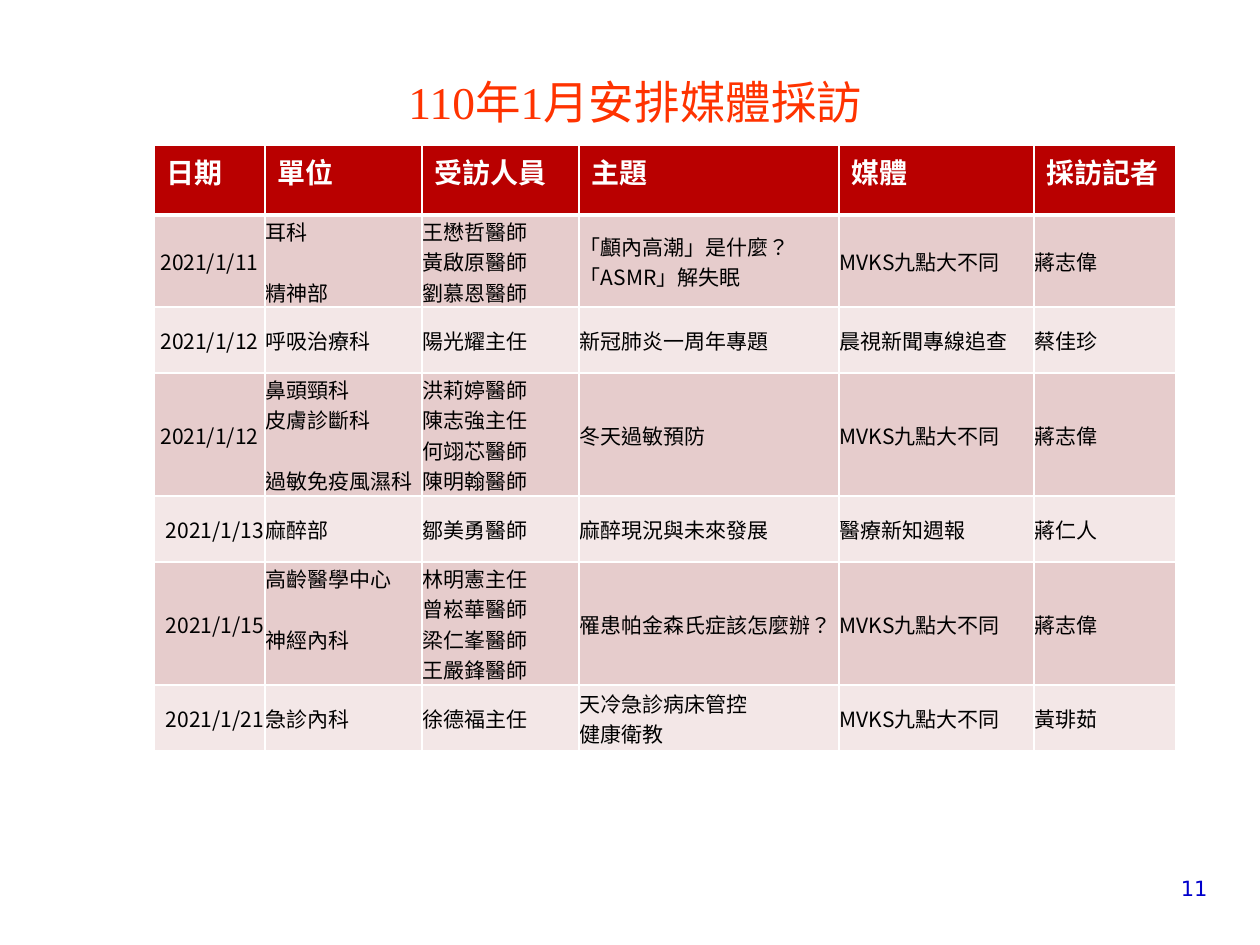
from lxml import etree
from pptx import Presentation
from pptx import util as u
from pptx.dml.color import RGBColor
from pptx.enum import text
from pptx.oxml import ns

PX = 914400 // 126
RED = RGBColor(0xB9, 0x00, 0x00)
ORANGE = RGBColor(0xFF, 0x33, 0x00)
BLUE = RGBColor(0x00, 0x00, 0xCC)
WHITE = RGBColor(0xFF, 0xFF, 0xFF)
BLACK = RGBColor(0x00, 0x00, 0x00)
BANDS = [RGBColor(0xE6, 0xCC, 0xCC), RGBColor(0xF3, 0xE7, 0xE7)]
LINE_GAP = u.Pt(17.5)
LEFT, CENTER, RIGHT = text.PP_ALIGN.LEFT, text.PP_ALIGN.CENTER, text.PP_ALIGN.RIGHT

TITLE = {"size": u.Pt(26), "name": "Times New Roman", "bold": False}
HEADER = {"size": u.Pt(16), "name": "Noto Sans CJK SC", "bold": True}
BODY = {"size": u.Pt(12), "name": "Noto Sans CJK TC", "bold": False}
NUMBER = {"size": u.Pt(12), "name": "DejaVu Sans", "bold": False}


def write(frame, content, style, color, alignment):
    paragraph = frame.paragraphs[0]
    for block_index, block in enumerate(content.split("\n\n")):
        for line_index, line in enumerate(block.split("\n")):
            if block_index or line_index:
                paragraph = frame.add_paragraph()
            if block_index and not line_index:
                paragraph.space_before = LINE_GAP
            paragraph.alignment = alignment
            run = paragraph.add_run()
            run.text = line
            for attribute, value in style.items():
                setattr(run.font, attribute, value)
            run.font.color.rgb = color
            properties = run.font._element
            properties.set("lang", "zh-TW")
            east_asian = etree.SubElement(properties, ns.qn("a:ea"))
            east_asian.set("typeface", style["name"].replace("Times New Roman", "Noto Sans CJK TC"))


def style_cell(cell, color, bottom_points):
    properties = cell._tc.get_or_add_tcPr()
    for side, points in zip("LRTB", (1, 1, 1, bottom_points)):
        line = etree.SubElement(properties, ns.qn(f"a:ln{side}"), w=str(u.Pt(points)))
        fill = etree.SubElement(line, ns.qn("a:solidFill"))
        etree.SubElement(fill, ns.qn("a:srgbClr"), val=str(WHITE))
    cell.fill.solid()
    cell.fill.fore_color.rgb = color


presentation = Presentation()
presentation.slide_width = 1260 * PX
presentation.slide_height = 945 * PX
slide = presentation.slides.add_slide(presentation.slide_layouts[5])

title = slide.shapes.title
title_box = {"left": 84, "top": 95, "width": 1103, "height": 40}
for attribute, value in title_box.items():
    setattr(title, attribute, value * PX)
title_frame = title.text_frame
title_frame.auto_size = text.MSO_AUTO_SIZE.NONE
title_frame.vertical_anchor = text.MSO_ANCHOR.BOTTOM
write(title_frame, "110年1月安排媒體採訪", TITLE, ORANGE, CENTER)

page_number = slide.shapes.add_textbox(1127 * PX, 869 * PX, 93 * PX, 38 * PX)
page_number.text_frame.word_wrap = True
write(page_number.text_frame, "11", NUMBER, BLUE, RIGHT)

headings = ["日期", "單位", "受訪人員", "主題", "媒體", "採訪記者"]
interviews = [
    ["2021/1/11", "耳科\n\n精神部", "王懋哲醫師\n黃啟原醫師\n劉慕恩醫師",
     "「顱內高潮」是什麼？「ASMR」解失眠", "MVKS九點大不同", "蔣志偉"],
    ["2021/1/12", "呼吸治療科", "陽光耀主任", "新冠肺炎一周年專題", "晨視新聞專線追查", "蔡佳珍"],
    ["2021/1/12", "鼻頭頸科\n皮膚診斷科\n\n過敏免疫風濕科",
     "洪莉婷醫師\n陳志強主任\n何翊芯醫師\n陳明翰醫師", "冬天過敏預防", "MVKS九點大不同", "蔣志偉"],
    ["2021/1/13", "麻醉部", "鄒美勇醫師", "麻醉現況與未來發展", "醫療新知週報", "蔣仁人"],
    ["2021/1/15", "高齡醫學中心\n\n神經內科",
     "林明憲主任\n曾崧華醫師\n梁仁峯醫師\n王嚴鋒醫師",
     "罹患帕金森氏症該怎麼辦？", "MVKS九點大不同", "蔣志偉"],
    ["2021/1/21", "急診內科", "徐德福主任", "天冷急診病床管控\n健康衛教", "MVKS九點大不同", "黃琲茹"],
]
column_widths = [111, 157, 157, 260, 195, 142]
row_heights = [70, 92, 66, 123, 66, 123, 66]

table = slide.shapes.add_table(
    len(row_heights), len(column_widths), 154 * PX, 145 * PX,
    sum(column_widths) * PX, sum(row_heights) * PX).table
for column, width in zip(table.columns, column_widths):
    column.width = width * PX
for row, height in zip(table.rows, row_heights):
    row.height = height * PX

for column_index, heading in enumerate(headings):
    cell = table.cell(0, column_index)
    style_cell(cell, RED, 3)
    write(cell.text_frame, heading, HEADER, WHITE, text.PP_ALIGN.JUSTIFY)

cell_format = {"margin_left": PX, "margin_right": PX, "margin_top": PX,
               "margin_bottom": 0, "vertical_anchor": text.MSO_ANCHOR.MIDDLE}
for row_index, interview in enumerate(interviews):
    date_alignment = CENTER if row_index < 3 else RIGHT
    for column_index, content in enumerate(interview):
        cell = table.cell(row_index + 1, column_index)
        for attribute, value in cell_format.items():
            setattr(cell, attribute, value)
        style_cell(cell, BANDS[row_index % 2], 1)
        alignment = LEFT if column_index else date_alignment
        write(cell.text_frame, content, BODY, BLACK, alignment)
table.cell(5, 1).vertical_anchor = text.MSO_ANCHOR.TOP

presentation.save("out.pptx")
